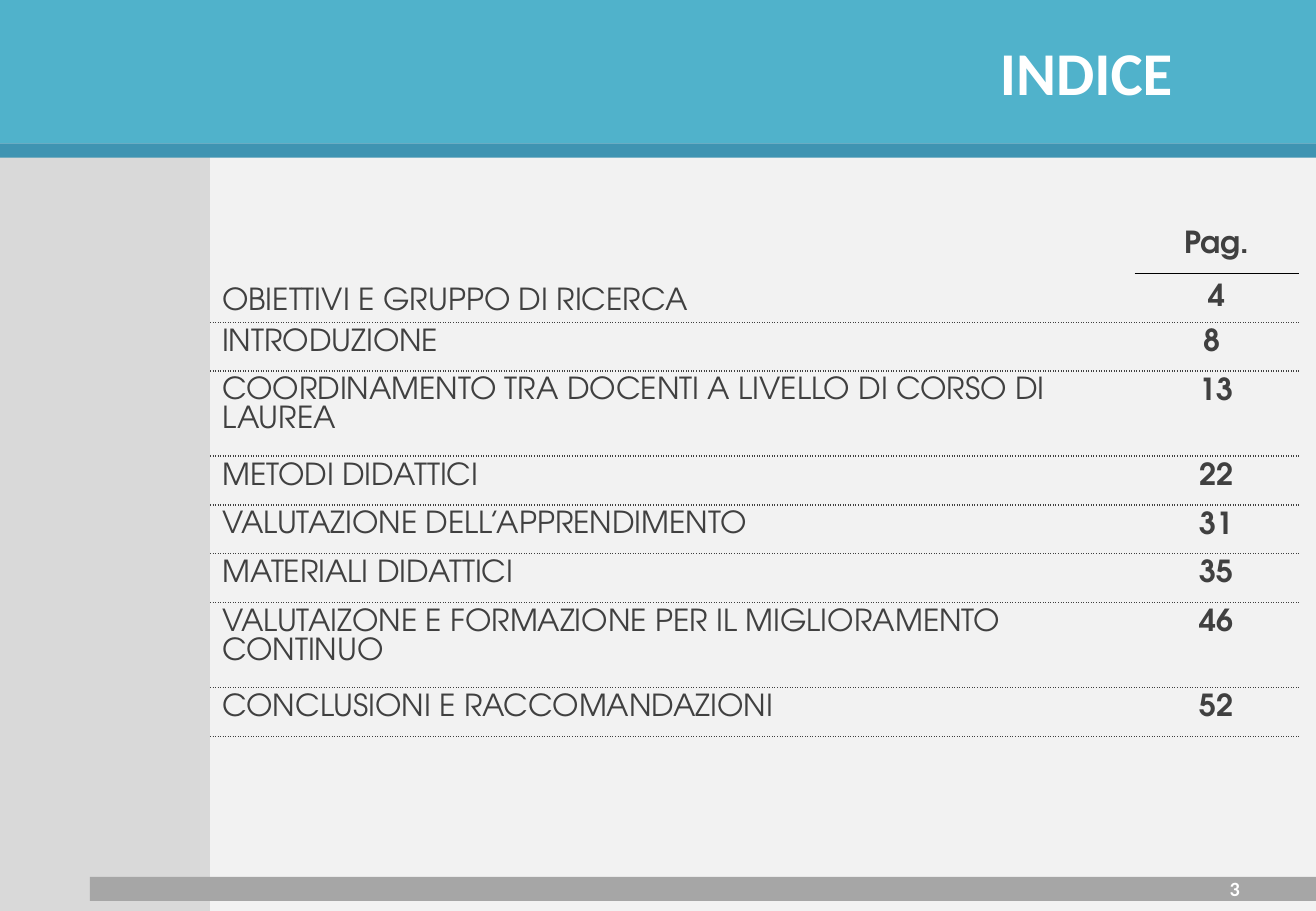
from lxml.etree import SubElement
from pptx import Presentation
from pptx.dml.color import RGBColor as Rgb
from pptx.enum.shapes import MSO_SHAPE as Preset
from pptx.enum.text import MSO_ANCHOR as Anchor, PP_ALIGN as Align
from pptx.oxml.ns import qn
from pptx.util import Cm, Pt

COLORS = {
    "background": "F2F2F2", "sidebar": "D9D9D9", "header": "50B2CB",
    "stripe": "3F94B2", "footer": "A6A6A6", "text": "404040",
    "white": "FFFFFF", "black": "000000",
}
CHAPTERS = [
    ("OBIETTIVI E GRUPPO DI RICERCA", "4"),
    ("INTRODUZIONE", "8 "),
    ("COORDINAMENTO TRA DOCENTI A LIVELLO DI CORSO DI LAUREA", "13"),
    ("METODI DIDATTICI", "22"),
    ("VALUTAZIONE DELL’APPRENDIMENTO", "31"),
    ("MATERIALI DIDATTICI", "35"),
    ("VALUTAIZONE E FORMAZIONE PER IL MIGLIORAMENTO CONTINUO", "46"),
    ("CONCLUSIONI E RACCOMANDAZIONI", "52"),
]
WIDTH, HEIGHT = 27.51, 19.05
DOTTED, SOLID = ("text", "sysDot"), ("black", "solid")


def color(name):
    return Rgb.from_string(COLORS[name])


def write(frame, text, *, size=18, font="TeX Gyre Adventor", ink="text",
          bold=False, align=Align.LEFT, spacing=None):
    frame.word_wrap = True
    paragraph = frame.paragraphs[0]
    paragraph.alignment = align
    paragraph.line_spacing = spacing
    run = paragraph.add_run()
    run.text = text
    run.font.size, run.font.name, run.font.bold = Pt(size), font, bold
    run.font.color.rgb = color(ink)


class IndexSlide:
    """Draws the parts of the index slide in one shared style."""

    def __init__(self, deck):
        self.slide = deck.slides.add_slide(deck.slide_layouts[6])
        backdrop = self.slide.background.fill
        backdrop.solid()
        backdrop.fore_color.rgb = color("background")

    def bar(self, left, top, width, height, fill):
        bar = self.slide.shapes.add_shape(
            Preset.RECTANGLE, Cm(left), Cm(top), Cm(width), Cm(height))
        bar.shadow.inherit = False
        bar.fill.solid()
        bar.fill.fore_color.rgb = color(fill)
        bar.line.fill.background()
        return bar

    def title(self, bar, text):
        frame = bar.text_frame
        frame.margin_right = Cm(3)
        frame.vertical_anchor = Anchor.MIDDLE
        write(frame, text, size=36, font="Calibri", ink="white", bold=True,
              align=Align.RIGHT)

    def page_number(self, text):
        box = self.slide.shapes.add_textbox(Cm(19.74), Cm(18.19), Cm(6.43), Cm(0.76))
        box.text_frame.vertical_anchor = Anchor.MIDDLE
        write(box.text_frame, text, size=12, font="Calibri", ink="white",
              bold=True, align=Align.RIGHT)

    def borders(self, cell, top, bottom):
        properties = cell._tc.get_or_add_tcPr()
        sides = {"lnL": None, "lnR": None, "lnT": top, "lnB": bottom}
        for side, style in sides.items():
            line = SubElement(properties, qn(f"a:{side}"), w=str(Pt(1)))
            if style is None:
                SubElement(line, qn("a:noFill"))
                continue
            ink, dash = style
            fill = SubElement(line, qn("a:solidFill"))
            SubElement(fill, qn("a:srgbClr"), val=COLORS[ink])
            SubElement(line, qn("a:prstDash"), val=dash)
        cell.fill.background()

    def index(self, chapters):
        table = self.slide.shapes.add_table(
            len(chapters) + 1, 2, Cm(4.39), Cm(4.7), Cm(22.76), Cm(10.7)).table
        table.first_row = table.horz_banding = False
        table.columns[0].width, table.columns[1].width = Cm(19.33), Cm(3.43)
        for row, (chapter, page) in enumerate([("", "Pag."), *chapters]):
            table.rows[row].height = Cm(1.78 if len(chapter) > 40 else 1.02)
            name, number = table.cell(row, 0), table.cell(row, 1)
            self.borders(name, DOTTED if row > 1 else None, DOTTED if row else None)
            self.borders(number, (None, SOLID)[row] if row < 2 else DOTTED,
                         DOTTED if row else SOLID)
            if row > 1:
                write(name.text_frame, chapter, spacing=Pt(17))
            write(number.text_frame, page, bold=True, align=Align.CENTER,
                  spacing=Pt(17))
        table.cell(1, 1).vertical_anchor = Anchor.MIDDLE
        first = table.cell(0, 0)
        first.merge(table.cell(1, 0))
        first.vertical_anchor = Anchor.BOTTOM
        write(first.text_frame, chapters[0][0], spacing=Pt(17))


def main():
    deck = Presentation()
    deck.slide_width, deck.slide_height = Cm(WIDTH), Cm(HEIGHT)
    page = IndexSlide(deck)
    page.bar(0, 3.1, 4.39, HEIGHT - 3.1, "sidebar")
    header = page.bar(0, 0, WIDTH, 3, "header")
    page.title(header, "INDICE")
    page.bar(0, 3, WIDTH, 0.3, "stripe")
    page.bar(1.88, 18.34, WIDTH - 1.88, 0.5, "footer")
    page.page_number("3")
    page.index(CHAPTERS)
    deck.save("out.pptx")


if __name__ == "__main__":
    main()
